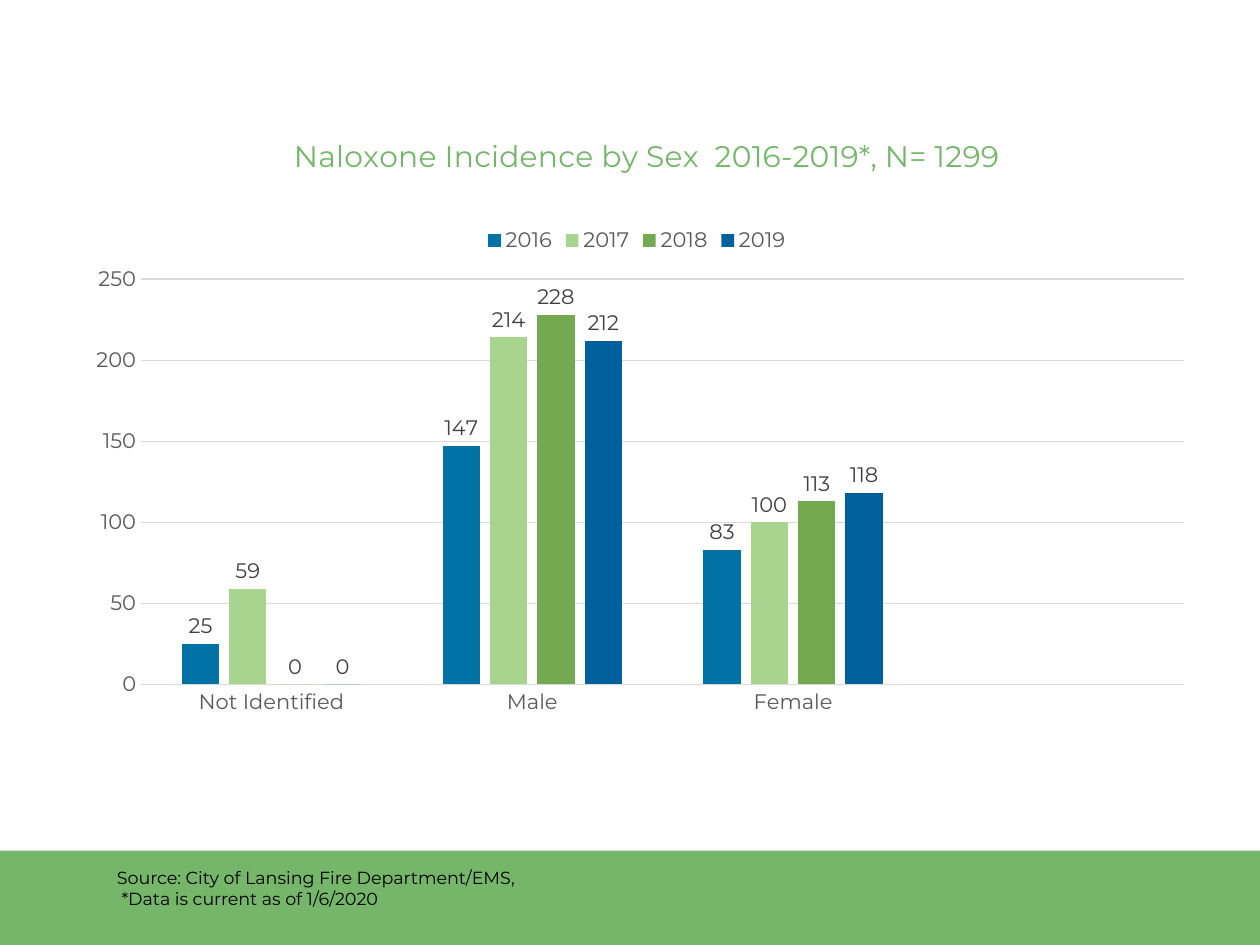
from dataclasses import dataclass
from lxml.etree import SubElement
from pptx import Presentation
from pptx.chart.data import CategoryChartData
from pptx.dml.color import RGBColor
from pptx.enum.chart import (XL_CHART_TYPE, XL_LABEL_POSITION,
                             XL_LEGEND_POSITION, XL_TICK_MARK)
from pptx.enum.shapes import MSO_SHAPE
from pptx.oxml import parse_xml
from pptx.oxml.ns import nsdecls, qn
from pptx.util import Inches, Pt

WIDE, HIGH = Inches(10), Inches(7.5)
FACE = "Montserrat"
HUES = {"band": "75B66A", "black": "000000", "axis": "595959",
        "label": "404040", "grid": "D9D9D9"}
CATS = ["Not Identified", "Male", "Female", ""]


@dataclass
class Year:
    name: str
    vals: tuple
    hue: str


YEARS = [
    Year("2016", (25, 147, 83, None), "0072A6"),
    Year("2017", (59, 214, 100, None), "A7D48E"),
    Year("2018", (0, 228, 113, None), "73A950"),
    Year("2019", (0, 212, 118, None), "00609C"),
]


def color(code: str) -> RGBColor:
    return RGBColor.from_string(code)


def style(font, size: float, hue: str) -> None:
    font.name, font.size, font.bold = FACE, Pt(size), False
    font.color.rgb = color(HUES[hue])


def rule(line) -> None:
    line.color.rgb = color(HUES["grid"])
    line.width = Pt(0.75)


def place(part, index: int, **shares: float) -> None:
    """Fix a chart part at shares of the chart's size."""
    for old in part.findall(qn("c:layout")):
        part.remove(old)
    layout = parse_xml(f"<c:layout {nsdecls('c')}><c:manualLayout/></c:layout>")
    manual = layout[0]
    if "w" in shares:
        SubElement(manual, qn("c:layoutTarget")).set("val", "inner")
    for key in ("x", "y"):
        SubElement(manual, qn(f"c:{key}Mode")).set("val", "edge")
    for key, share in shares.items():
        SubElement(manual, qn(f"c:{key}")).set("val", str(share))
    part.insert(index, layout)


def draw_band(slide) -> None:
    band = slide.shapes.add_shape(MSO_SHAPE.RECTANGLE, 0, int(HIGH * 0.9),
                                  WIDE, int(HIGH * 0.1))
    band.shadow.inherit = False
    band.fill.solid()
    band.fill.fore_color.rgb = color(HUES["band"])
    band.line.fill.background()


def draw_chart(slide) -> None:
    data = CategoryChartData()
    data.categories = CATS
    for year in YEARS:
        data.add_series(year.name, year.vals)
    chart = slide.shapes.add_chart(
        XL_CHART_TYPE.COLUMN_CLUSTERED, Inches(0.58), Inches(0.83),
        Inches(9), Inches(4.95), data).chart
    style(chart.font, 10, "black")

    # Title and legend
    chart.has_title = True
    title = chart.chart_title
    title.text_frame.text = "Naloxone Incidence by Sex  2016-2019*, N= 1299"
    style(title.text_frame.paragraphs[0].runs[0].font, 17, "band")
    chart.has_legend = True
    legend = chart.legend
    legend.position = XL_LEGEND_POSITION.TOP
    legend.include_in_layout = False
    style(legend.font, 12, "axis")

    # Axes
    for axis in (chart.category_axis, chart.value_axis):
        axis.major_tick_mark = axis.minor_tick_mark = XL_TICK_MARK.NONE
        style(axis.tick_labels.font, 12, "axis")
    rule(chart.category_axis.format.line)
    values = chart.value_axis
    values.minimum_scale, values.maximum_scale, values.major_unit = 0, 250, 50
    values.format.line.fill.background()
    values.has_major_gridlines = True
    rule(values.major_gridlines.format.line)

    # Columns
    plot = chart.plots[0]
    plot.gap_width, plot.overlap, plot.vary_by_categories = 219, -27, False
    for year, series in zip(YEARS, plot.series):
        series.format.fill.solid()
        series.format.fill.fore_color.rgb = color(year.hue)
        labels = series.data_labels
        labels.show_value = True
        labels.position = XL_LABEL_POSITION.OUTSIDE_END
        style(labels.font, 12, "label")

    # Positions inside the chart
    root = chart.element
    place(root.find(".//" + qn("c:title")), 1, x=0.19, y=0.04)
    place(root.find(".//" + qn("c:legend")), 1, x=0.36, y=0.19)
    place(root.find(".//" + qn("c:plotArea")), 0, x=0.06, y=0.28, w=0.92, h=0.65)


def draw_source(slide) -> None:
    frame = slide.shapes.add_textbox(Inches(0.83), Inches(6.83),
                                     Inches(8.08), Inches(0.44)).text_frame
    frame.word_wrap = True
    frame.text = ("Source: City of Lansing Fire Department/EMS,\n"
                  " *Data is current as of 1/6/2020")
    for para in frame.paragraphs:
        style(para.runs[0].font, 10, "black")


def main() -> None:
    deck = Presentation()
    deck.slide_width, deck.slide_height = WIDE, HIGH
    slide = deck.slides.add_slide(deck.slide_layouts[6])
    draw_band(slide)
    draw_chart(slide)
    draw_source(slide)
    deck.save("out.pptx")


if __name__ == "__main__":
    main()
